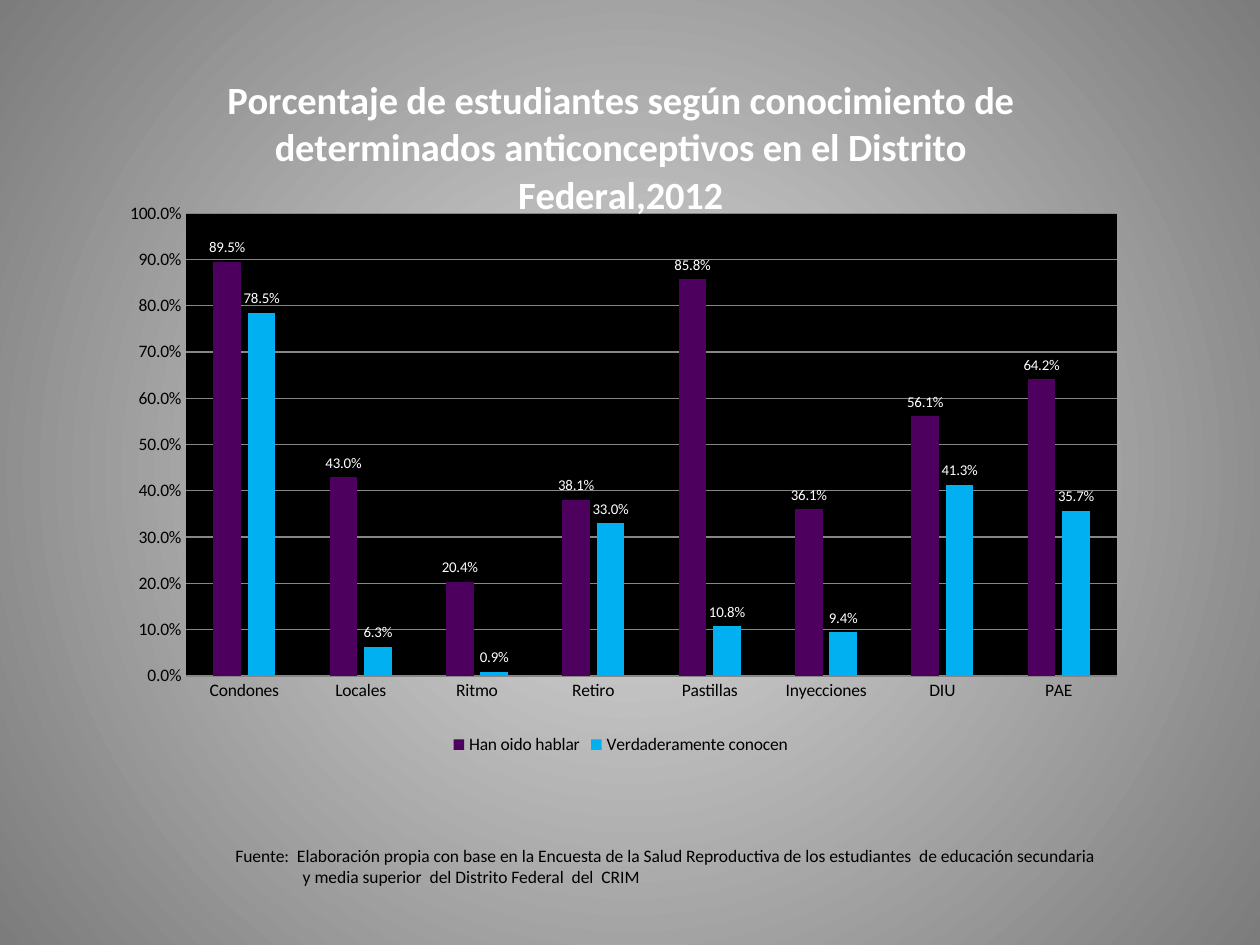
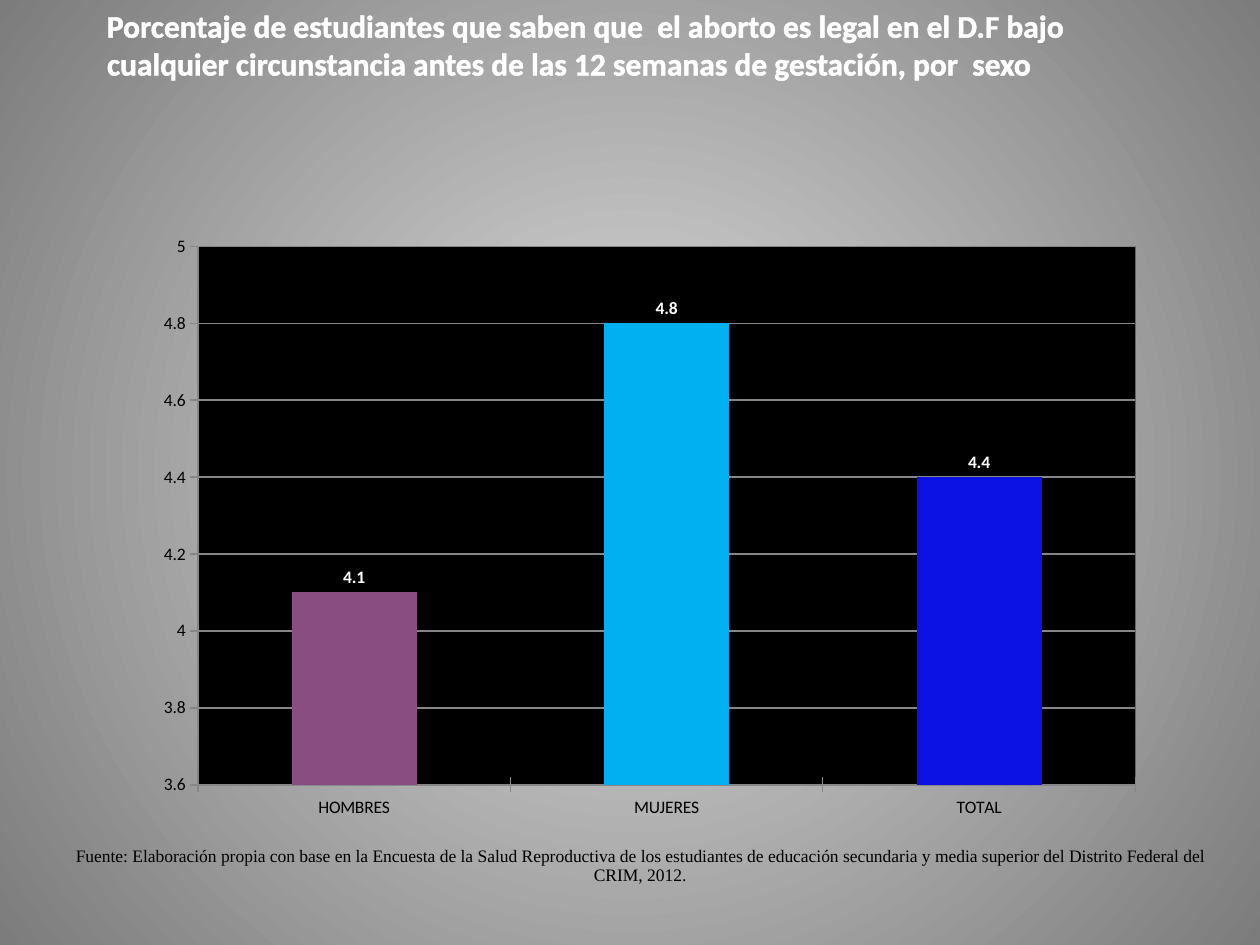
from dataclasses import dataclass

from lxml import etree
from pptx import Presentation
from pptx import util as u
from pptx.chart import data as cd
from pptx.dml import color
from pptx.enum import chart as ce, text
from pptx.oxml import ns, parse_xml

Pt = u.Pt
RGB = color.RGBColor.from_string


@dataclass(frozen=True)
class Theme:
    font: str = "Calibri"
    serif: str = "Times New Roman"
    ink: str = "000000"
    light: str = "FFFFFF"
    grid: str = "868686"
    glow: str = "DCDCDC"
    edge: str = "7C7C7C"
    plum: str = "4E005F"
    mauve: str = "894D82"
    sky: str = "00B0F0"
    blue: str = "0C11E4"
    head: float = 22
    title: float = 18
    body: float = 10
    label: float = 8.5


T = Theme()


def style(font, size, tint, bold=False, face=T.font):
    font.name, font.size, font.bold = face, Pt(size), bold
    font.color.rgb = RGB(tint)


def paint(fill, tint):
    fill.solid()
    fill.fore_color.rgb = RGB(tint)


def rule(line):
    line.color.rgb = RGB(T.grid)
    line.width = Pt(0.75)


def new_slide(deck):
    """Add a blank slide with the round grey glow behind it."""
    slide = deck.slides.add_slide(deck.slide_layouts[6])
    fill = slide.background.fill
    fill.gradient()
    for stop, tint in zip(fill.gradient_stops, (T.glow, T.edge)):
        stop.color.rgb = RGB(tint)
    grad = slide.element.find(".//" + ns.qn("a:gradFill"))
    grad.remove(grad.find(ns.qn("a:lin")))
    round_ = etree.SubElement(grad, ns.qn("a:path"), path="circle")
    etree.SubElement(round_, ns.qn("a:fillToRect"),
                     l="50000", t="50000", r="50000", b="50000")
    return slide


def add_text(slide, box, lines, size, tint, bold=False, wrap=True):
    frame = slide.shapes.add_textbox(*map(Pt, box)).text_frame
    frame.word_wrap = wrap
    frame.auto_size = text.MSO_AUTO_SIZE.SHAPE_TO_FIT_TEXT
    frame.text = "\n".join(lines)
    for para in frame.paragraphs:
        style(para.font, size, tint, bold)
    return frame


def fill_plot(chart, inner=None):
    """Blacken the plot area and, if inner is given, fix it as x, y, w, h shares."""
    plot = chart.element.find(".//" + ns.qn("c:plotArea"))
    plot.append(parse_xml(
        f'<c:spPr {ns.nsdecls("c", "a")}><a:solidFill>'
        f'<a:srgbClr val="{T.ink}"/></a:solidFill></c:spPr>'))
    if inner:
        for old in plot.findall(ns.qn("c:layout")):
            plot.remove(old)
        parts = [("layoutTarget", "inner"), ("xMode", "edge"), ("yMode", "edge"),
                 *zip("xywh", inner)]
        rows = "".join(f'<c:{tag} val="{val}"/>' for tag, val in parts)
        plot.insert(0, parse_xml(
            f'<c:layout {ns.nsdecls("c")}><c:manualLayout>{rows}'
            '</c:manualLayout></c:layout>'))


def add_bars(slide, box, cats, series, scale, form, tick, gap, lap=0,
             size=T.label, bold=False):
    """Draw columns; series holds (name, values, colour), scale is low, high, step."""
    data = cd.CategoryChartData(number_format=form)
    data.categories = cats
    for name, vals, _ in series:
        data.add_series(name, vals)
    chart = slide.shapes.add_chart(
        ce.XL_CHART_TYPE.COLUMN_CLUSTERED, *map(Pt, box), data).chart
    style(chart.font, T.body, T.ink)
    chart.has_title = chart.has_legend = False

    plot = chart.plots[0]
    plot.vary_by_categories = False
    plot.gap_width, plot.overlap = gap, lap
    for bar, (_, _, tint) in zip(plot.series, series):
        paint(bar.format.fill, tint)
        bar.invert_if_negative = False
        tags = bar.data_labels
        tags.show_value = True
        tags.position = ce.XL_LABEL_POSITION.OUTSIDE_END
        tags.number_format, tags.number_format_is_linked = form, False
        style(tags.font, size, T.light, bold)

    for axis in (chart.category_axis, chart.value_axis):
        axis.major_tick_mark = tick
        axis.minor_tick_mark = ce.XL_TICK_MARK.NONE
        rule(axis.format.line)
    axis = chart.value_axis
    axis.minimum_scale, axis.maximum_scale, axis.major_unit = scale
    axis.has_major_gridlines = True
    rule(axis.major_gridlines.format.line)
    axis.tick_labels.number_format = form
    axis.tick_labels.number_format_is_linked = False
    return chart


def add_source(slide, box, words):
    """Place the source note in a plain table of one cell."""
    table = slide.shapes.add_table(1, 1, *map(Pt, box)).table
    table.first_row = table.horz_banding = False
    cell = table.cell(0, 0)
    cell.text = words
    cell.vertical_anchor = text.MSO_ANCHOR.MIDDLE
    cell.margin_left = cell.margin_right = cell.margin_top = cell.margin_bottom = 0
    cell.fill.background()
    para = cell.text_frame.paragraphs[0]
    para.alignment = text.PP_ALIGN.CENTER
    style(para.font, T.body, T.ink, face=T.serif)
    props = cell._tc.get_or_add_tcPr()
    for spot, side in enumerate("LRTB"):
        line = etree.Element(ns.qn(f"a:ln{side}"), w="0")
        etree.SubElement(line, ns.qn("a:noFill"))
        props.insert(spot, line)


def methods(deck):
    slide = new_slide(deck)
    chart = add_bars(
        slide, (59.8, 25.9, 589.7, 408.2),
        ["Condones", "Locales", "Ritmo", "Retiro",
         "Pastillas", "Inyecciones", "DIU", "PAE"],
        [("Han oido hablar",
          (0.895, 0.43, 0.204, 0.381, 0.858, 0.361, 0.561, 0.642), T.plum),
         ("Verdaderamente conocen",
          (0.785, 0.063, 0.009, 0.33, 0.108, 0.094, 0.413, 0.357), T.sky)],
        (0, 1, 0.1), "0.0%", ce.XL_TICK_MARK.NONE, gap=197, lap=-25)
    chart.value_axis.format.line.fill.background()
    fill_plot(chart, (0.079, 0.235, 0.902, 0.648))

    chart.has_title = True
    frame = chart.chart_title.text_frame
    frame.text = ("Porcentaje de estudiantes según conocimiento de determinados "
                  "anticonceptivos en el Distrito Federal,2012")
    style(frame.paragraphs[0].font, T.head, T.light, True)
    chart.has_legend = True
    chart.legend.position = ce.XL_LEGEND_POSITION.BOTTOM
    chart.legend.include_in_layout = False

    note = add_text(
        slide, (127.4, 479.5, 512.6, 31.7),
        ["Fuente:  Elaboración propia con base en la Encuesta de la Salud "
         "Reproductiva de los estudiantes  de educación secundaria",
         "y media superior  del Distrito Federal  del  CRIM"],
        T.body, T.ink, wrap=False)
    props = note.paragraphs[1]._p.get_or_add_pPr()
    props.set("marL", str(int(Pt(38.5))))
    props.set("indent", "0")


def law(deck):
    slide = new_slide(deck)
    chart = add_bars(
        slide, (82.1, 128.2, 578.2, 345.6), ["HOMBRES", "MUJERES", "TOTAL"],
        [("Series 1", (4.1, 4.8, 4.4), T.sky)],
        (3.6, 5, 0.2), "General", ce.XL_TICK_MARK.CROSS, gap=150,
        size=T.body, bold=True)
    fill_plot(chart)
    for spot, tint in ((0, T.mauve), (2, T.blue)):
        paint(chart.plots[0].series[0].points[spot].format.fill, tint)

    title = add_text(
        slide, (54, 0, 635, 51.1),
        ["Porcentaje de estudiantes que saben que  el aborto es legal en el D.F "
         "bajo cualquier circunstancia antes de las 12 semanas de gestación, "
         "por  sexo"], T.title, T.light, True)
    props = title.paragraphs[0].runs[0]._r.get_or_add_rPr()
    props.insert(0, parse_xml(
        f'<a:ln {ns.nsdecls("a")} w="{int(Pt(1.45))}"><a:solidFill>'
        f'<a:srgbClr val="{T.light}"/></a:solidFill></a:ln>'))

    add_source(
        slide, (42.5, 478.1, 646.6, 33.8),
        "Fuente: Elaboración propia con base en la Encuesta de la Salud "
        "Reproductiva de los estudiantes de educación secundaria y media "
        "superior del Distrito Federal del CRIM, 2012.")


def main():
    deck = Presentation()
    deck.slide_width, deck.slide_height = Pt(720), Pt(540)
    methods(deck)
    law(deck)
    deck.save("out.pptx")


if __name__ == "__main__":
    main()
